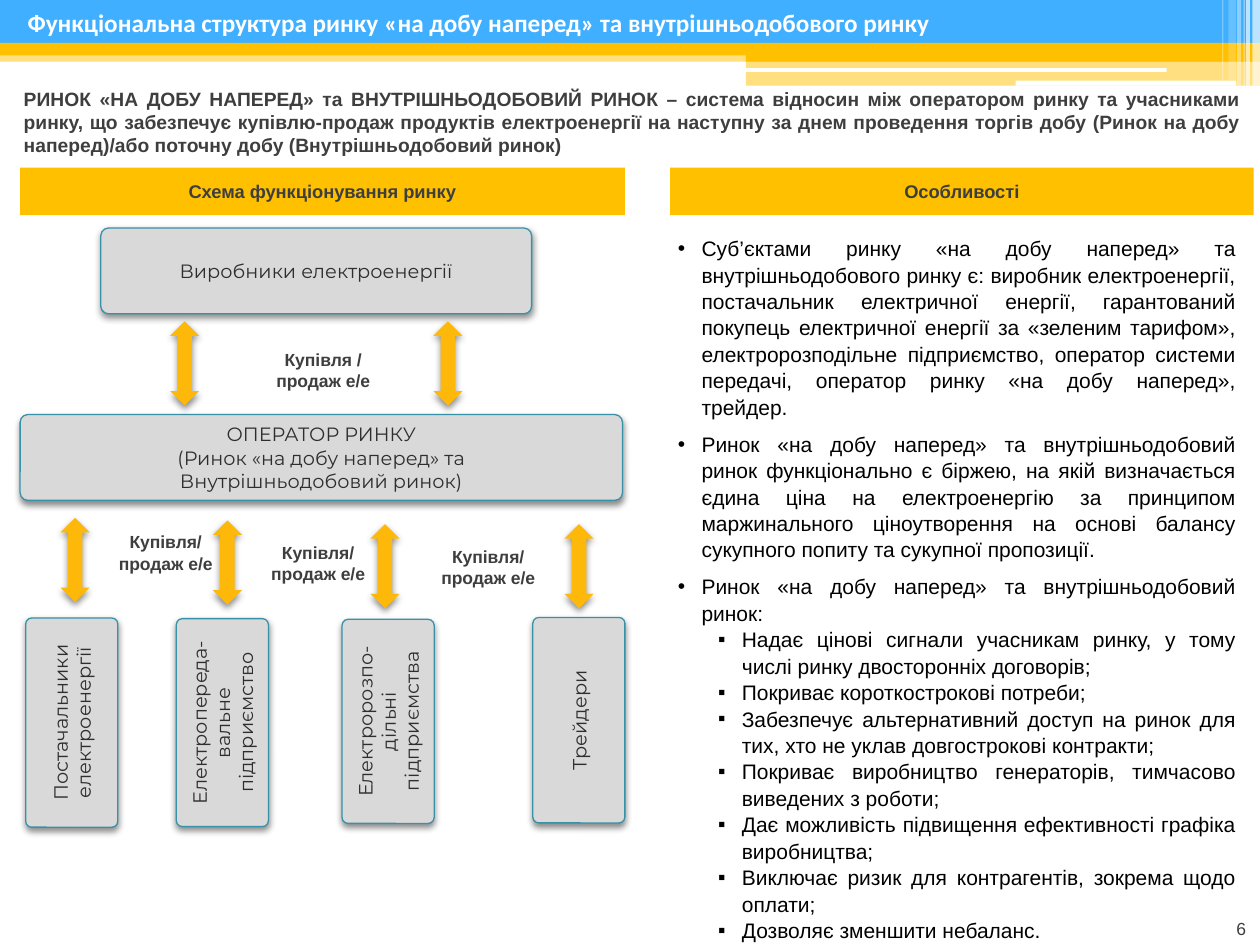
import pptx
import pptx.dml.color
import pptx.enum.shapes
import pptx.enum.text
import pptx.oxml
import pptx.oxml.ns
import pptx.util
from lxml import etree

Pt = pptx.util.Pt
SHAPE = pptx.enum.shapes.MSO_SHAPE
ALIGN = pptx.enum.text.PP_ALIGN
ANCHOR = pptx.enum.text.MSO_ANCHOR
qn = pptx.oxml.ns.qn

COLORS = {
    "blue": "40AFFF", "gold": "FFC000", "arrow": "FEB80A", "white": "FFFFFF",
    "gray": "D9D9D9", "outline": "3891A7", "text": "3E3E3E",
    "box_text": "2E2E2E", "black": "000000",
}

# left, top, width, height, colour, opacity in percent
HEADER_BARS = [
    (0, 28.8, 720, 6.5, "gold", 50),
    (0, 0, 720, 24.5, "blue", 100),
    (0, 24.5, 720, 7.2, "gold", 100),
    (426.2, 28.1, 293.8, 7.2, "gold", 100),
    (426.2, 34.6, 293.8, 14.4, "gold", 50),
]
HEADER_LINES = [(425.5, 38.9, 241.2, 2.2), (580.3, 46.1, 126, 2.9)]
# left, width, height, opacity in percent
HEADER_STRIPES = [
    (715.7, 4.3, 49, 65), (712.1, 2.2, 49, 65), (710.6, 0.7, 49, 60),
    (707, 2.2, 49, 40), (702, 4.3, 46, 20), (698.4, 0.7, 46, 30),
]

FEATURES = [
    (0, "Суб’єктами ринку «на добу наперед» та внутрішньодобового ринку є: виробник "
        "електроенергії, постачальник електричної енергії, гарантований покупець "
        "електричної енергії за «зеленим тарифом», електророзподільне підприємство, "
        "оператор системи передачі, оператор ринку «на добу наперед», трейдер."),
    (0, "Ринок «на добу наперед» та внутрішньодобовий ринок функціонально є біржею, на "
        "якій визначається єдина ціна на електроенергію за принципом маржинального "
        "ціноутворення на основі балансу сукупного попиту та сукупної пропозиції."),
    (0, "Ринок «на добу наперед» та внутрішньодобовий ринок:"),
    (1, "Надає цінові сигнали учасникам ринку, у тому числі ринку двосторонніх договорів;"),
    (1, "Покриває короткострокові потреби;"),
    (1, "Забезпечує альтернативний доступ на ринок для тих, хто не уклав довгострокові "
        "контракти;"),
    (1, "Покриває виробництво генераторів, тимчасово виведених з роботи;"),
    (1, "Дає можливість підвищення ефективності графіка виробництва;"),
    (1, "Виключає ризик для контрагентів, зокрема щодо оплати;"),
    (1, "Дозволяє зменшити небаланс."),
]
INTRO = ("РИНОК «НА ДОБУ НАПЕРЕД» та ВНУТРІШНЬОДОБОВИЙ РИНОК – система відносин між "
         "оператором ринку та учасниками ринку, що забезпечує купівлю-продаж продуктів "
         "електроенергії на наступну за днем проведення торгів добу (Ринок на добу "
         "наперед)/або поточну добу (Внутрішньодобовий ринок)")

# centre x, centre y, length, name
PARTICIPANTS = [
    (41, 412.9, 119.5, "Постачальники електроенергії"),
    (127.1, 412.9, 118.8, "Електропереда-вальне підприємство"),
    (221.8, 412.2, 116.6, "Електророзпо-дільні підприємства"),
    (330.8, 411.5, 117.4, "Трейдери"),
]
ARROWS = [(97.2, 183.6), (247.7, 183.6),
          (34.6, 295.9), (121.7, 297.4), (211.7, 299.5), (322.6, 299.5)]
TRADE_LABELS = [(141.1, 195.8, "Купівля /"), (51.1, 300.2, "Купівля/"),
                (138.2, 306, "Купівля/"), (235.4, 308.2, "Купівля/")]


class SlideBuilder:
    def __init__(self, prs):
        self.slide = prs.slides.add_slide(prs.slide_layouts[1])

    def color(self, name):
        return pptx.dml.color.RGBColor.from_string(COLORS[name])

    def place(self, sp, x, y, w, h):
        sp.left, sp.top, sp.width, sp.height = Pt(x), Pt(y), Pt(w), Pt(h)

    def bring_to_front(self, sp):
        self.slide.shapes._spTree.append(sp._element)

    def style_paragraph(self, p, size, color, bold=False, font="Arial", align=ALIGN.CENTER):
        p.alignment = align
        for r in p.runs:
            r.font.size, r.font.bold, r.font.name = Pt(size), bold, font
            r.font.color.rgb = self.color(color)

    def fill_text(self, sp, text, size, color, anchor=ANCHOR.MIDDLE, **style):
        tf = sp.text_frame
        tf.word_wrap = True
        tf.vertical_anchor = anchor
        tf.text = text
        for p in tf.paragraphs:
            self.style_paragraph(p, size, color, **style)

    def shape(self, kind, x, y, w, h, fill, opacity=100):
        sp = self.slide.shapes.add_shape(kind, Pt(x), Pt(y), Pt(w), Pt(h))
        sp.shadow.inherit = False
        sp.fill.solid()
        sp.fill.fore_color.rgb = self.color(fill)
        sp.line.fill.background()
        if opacity < 100:
            clr = sp._element.spPr.find(".//" + qn("a:srgbClr"))
            etree.SubElement(clr, qn("a:alpha"), val=str(opacity * 1000))
        return sp

    def add_shadow(self, sp):
        effects = sp._element.spPr.find(qn("a:effectLst"))
        outer = etree.SubElement(effects, qn("a:outerShdw"), blurRad=str(Pt(4)),
                                 dist=str(Pt(2)), dir="5400000", rotWithShape="0")
        clr = etree.SubElement(outer, qn("a:srgbClr"), val=COLORS["black"])
        etree.SubElement(clr, qn("a:alpha"), val="45000")

    def box(self, x, y, w, h, text, corner=0.09):
        sp = self.shape(SHAPE.ROUNDED_RECTANGLE, x, y, w, h, "gray")
        sp.adjustments[0] = corner
        sp.line.color.rgb = self.color("outline")
        sp.line.width = Pt(0.75)
        self.add_shadow(sp)
        self.fill_text(sp, text, 11, "box_text", font="Montserrat")
        return sp

    def upright_box(self, cx, cy, length, text, depth=52.6):
        """Box turned a quarter to the left, so that its text runs upwards."""
        sp = self.box(cx - length / 2, cy - depth / 2, length, depth, text, corner=0.064)
        sp.rotation = 270

    def arrow(self, x, y):
        self.add_shadow(self.shape(SHAPE.UP_DOWN_ARROW, x, y, 16.6, 48.2, "arrow"))

    def banner(self, x, w, text):
        sp = self.shape(SHAPE.RECTANGLE, x, 95.8, w, 27.2, "gold")
        self.fill_text(sp, text, 10.5, "text", bold=True)

    def text(self, x, y, w, h, text, size, **style):
        sp = self.slide.shapes.add_textbox(Pt(x), Pt(y), Pt(w), Pt(h))
        self.fill_text(sp, text, size, "text", **style)

    def header(self):
        for x, y, w, h, fill, opacity in HEADER_BARS:
            self.shape(SHAPE.RECTANGLE, x, y, w, h, fill, opacity)
        for x, y, w, h in HEADER_LINES:
            self.shape(SHAPE.ROUNDED_RECTANGLE, x, y, w, h, "white")
        for x, w, h, opacity in HEADER_STRIPES:
            self.shape(SHAPE.RECTANGLE, x, 0, w, h, "white", opacity)

    def title(self, text):
        sp = self.slide.shapes.title
        self.place(sp, 8.6, 0, 697, 25.9)
        self.fill_text(sp, text, 14.4, "white", bold=True, font="Calibri", align=ALIGN.LEFT)
        sp.text_frame.auto_size = pptx.enum.text.MSO_AUTO_SIZE.NONE
        self.bring_to_front(sp)

    def bullets(self, items):
        sp = self.slide.placeholders[1]
        self.place(sp, 380.2, 130.3, 333.4, 394.6)
        tf = sp.text_frame
        tf.text = "\n".join(text for _, text in items)
        tf.word_wrap = True
        tf.auto_size = pptx.enum.text.MSO_AUTO_SIZE.NONE
        tf.vertical_anchor = ANCHOR.TOP
        for i, (p, (level, _)) in enumerate(zip(tf.paragraphs, items)):
            pPr = p._p.get_or_add_pPr()
            pPr.set("marL", str(Pt((13.5, 36.5)[level])))
            pPr.set("indent", str(Pt(-13.5)))
            etree.SubElement(pPr, qn("a:buFont"), typeface="Arial")
            etree.SubElement(pPr, qn("a:buChar"), char="•▪"[level])
            p.level = level
            p.line_spacing = 1.05
            p.space_before = Pt(6 if i and level == 0 else 0)
            self.style_paragraph(p, 12, "black", align=ALIGN.JUSTIFY)
        self.bring_to_front(sp)


def main():
    prs = pptx.Presentation()
    prs.slide_width, prs.slide_height = Pt(720), Pt(540)
    s = SlideBuilder(prs)
    s.header()
    s.title("Функціональна структура ринку «на добу наперед» та внутрішньодобового ринку")
    s.bullets(FEATURES)
    s.text(685.4, 519.8, 33.8, 20.2, "6", 10, anchor=ANCHOR.BOTTOM, align=ALIGN.RIGHT)
    s.banner(11.5, 345.6, "Схема функціонування ринку")
    s.banner(383, 333.4, "Особливості")
    s.text(6.5, 46.1, 709.9, 63.4, INTRO, 11, anchor=ANCHOR.TOP, bold=True,
           align=ALIGN.JUSTIFY)
    s.box(11.5, 236.9, 344.2, 49,
          "ОПЕРАТОР РИНКУ\n(Ринок «на добу наперед» та\nВнутрішньодобовий ринок)")
    s.box(57.6, 130.3, 246.2, 49, "Виробники електроенергії")
    for x, y in ARROWS:
        s.arrow(x, y)
    for x, y, action in TRADE_LABELS:
        s.text(x, y, 87.1, 31.7, action + "\nпродаж е/е", 10, anchor=ANCHOR.TOP, bold=True)
    for participant in PARTICIPANTS:
        s.upright_box(*participant)
    prs.save("out.pptx")


if __name__ == "__main__":
    main()
